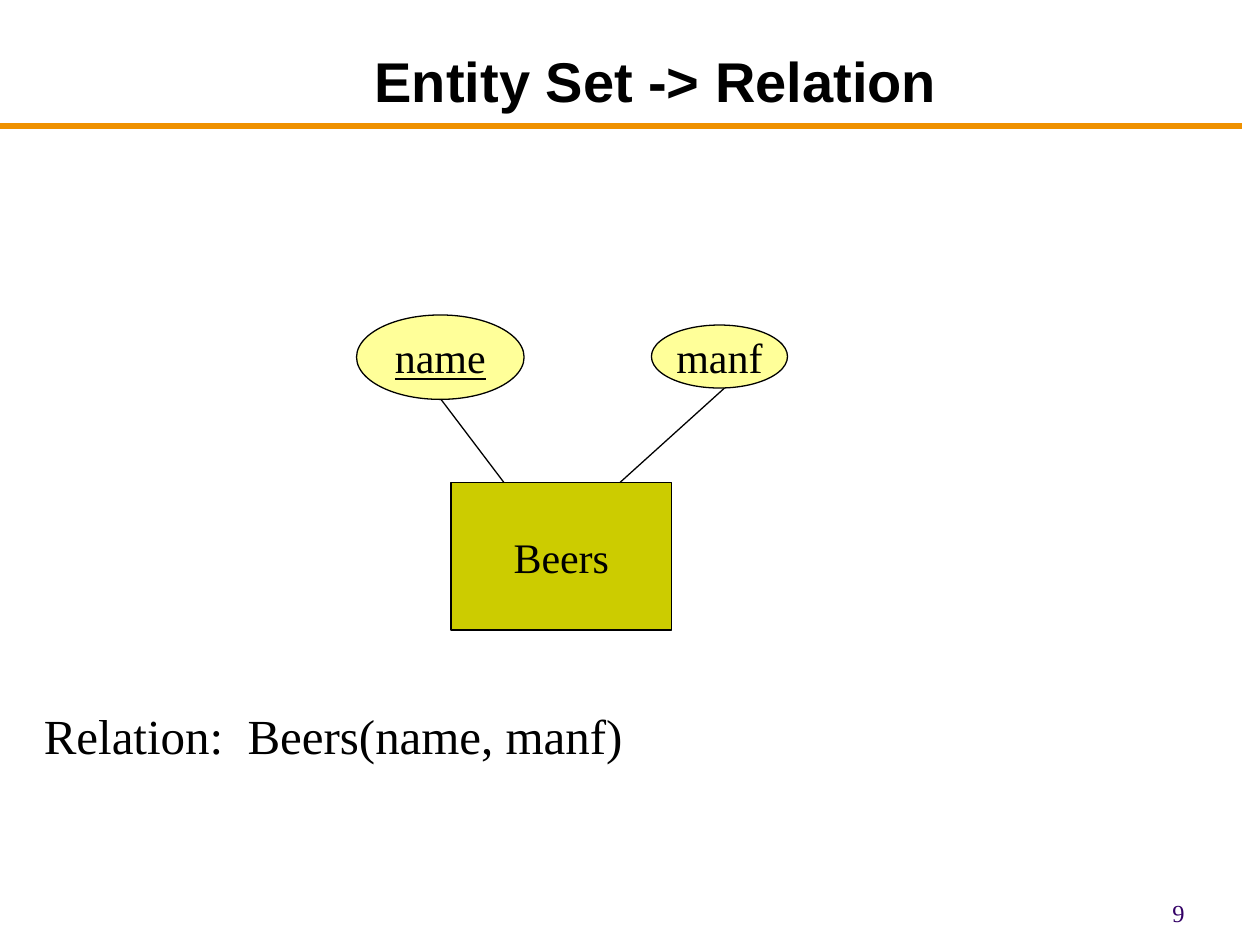
"""Build a slide that maps an entity set to its relation."""
from lxml import etree
from pptx import Presentation
from pptx.dml.color import RGBColor
from pptx.enum.shapes import MSO_CONNECTOR, MSO_SHAPE
from pptx.enum.text import MSO_ANCHOR, PP_ALIGN
from pptx.oxml.ns import qn
from pptx.util import Inches, Pt

RECTANGLE, ELLIPSE = MSO_SHAPE.RECTANGLE, MSO_SHAPE.OVAL
STRAIGHT = MSO_CONNECTOR.STRAIGHT
LEFT, CENTER, RIGHT = PP_ALIGN.LEFT, PP_ALIGN.CENTER, PP_ALIGN.RIGHT
TOP, MIDDLE, BOTTOM = MSO_ANCHOR.TOP, MSO_ANCHOR.MIDDLE, MSO_ANCHOR.BOTTOM
SERIF, SANS = "Times New Roman", "Arial"
BLACK, ORANGE, PURPLE = "000000", "EF9100", "330066"
OLIVE, YELLOW = "CCCC00", "FFFF99"

LABELS = [
    ("Entity Set -> Relation", (1.08, 0.25, 8.25, 0.7), BOTTOM, CENTER,
     dict(size=32, font=SANS, bold=True)),
    ("Relation:  Beers(name, manf)", (0.25, 5.55, 9.42, 0.56), MIDDLE, LEFT,
     dict(size=28)),
    ("9", (7.17, 7.08, 2.33, 0.25), TOP, RIGHT, dict(size=14, color=PURPLE)),
]
NODES = [
    ("Beers", RECTANGLE, (3.58, 3.83, 1.75, 1.17), OLIVE, False),
    ("name", ELLIPSE, (2.83, 2.5, 1.33, 0.67), YELLOW, True),
    ("manf", ELLIPSE, (5.17, 2.58, 1.08, 0.5), YELLOW, False),
]
LINES = [
    ((0, 1), (9.86, 1), ORANGE, 3),
    ((3.5, 3.17), (4, 3.83), BLACK, 0.75),
    ((5.75, 3.08), (4.92, 3.83), BLACK, 0.75),
]


def rgb(value):
    return RGBColor.from_string(value)


def write(shape, text, anchor, align, size, font=SERIF, color=BLACK,
          bold=False, underline=False, wrap=True):
    frame = shape.text_frame
    frame.word_wrap = wrap
    frame.vertical_anchor = anchor
    para = frame.paragraphs[0]
    para.alignment = align
    span = para.add_run()
    span.text = text
    span.font.name, span.font.size = font, Pt(size)
    span.font.bold, span.font.underline = bold, underline
    span.font.color.rgb = rgb(color)


def add_label(page, text, place, anchor, align, style):
    box = page.shapes.add_textbox(*map(Inches, place))
    write(box, text, anchor, align, **style)


def add_node(page, text, kind, place, fill, is_key):
    node = page.shapes.add_shape(kind, *map(Inches, place))
    node.shadow.inherit = False
    node.fill.solid()
    node.fill.fore_color.rgb = rgb(fill)
    node.line.color.rgb = rgb(BLACK)
    node.line.width = Pt(0.75)
    write(node, text, MIDDLE, CENTER, 24, underline=is_key, wrap=False)


def add_line(page, start, end, color, width):
    line = page.shapes.add_connector(STRAIGHT, *map(Inches, start + end))
    line.line.color.rgb = rgb(color)
    line.line.width = Pt(width)
    etree.SubElement(line._element.spPr, qn("a:effectLst"))


def main():
    deck = Presentation()
    deck.slide_width, deck.slide_height = Inches(10), Inches(7.5)
    page = deck.slides.add_slide(deck.slide_layouts[6])
    for add, items in ((add_label, LABELS), (add_node, NODES), (add_line, LINES)):
        for item in items:
            add(page, *item)
    deck.save("out.pptx")


if __name__ == "__main__":
    main()
